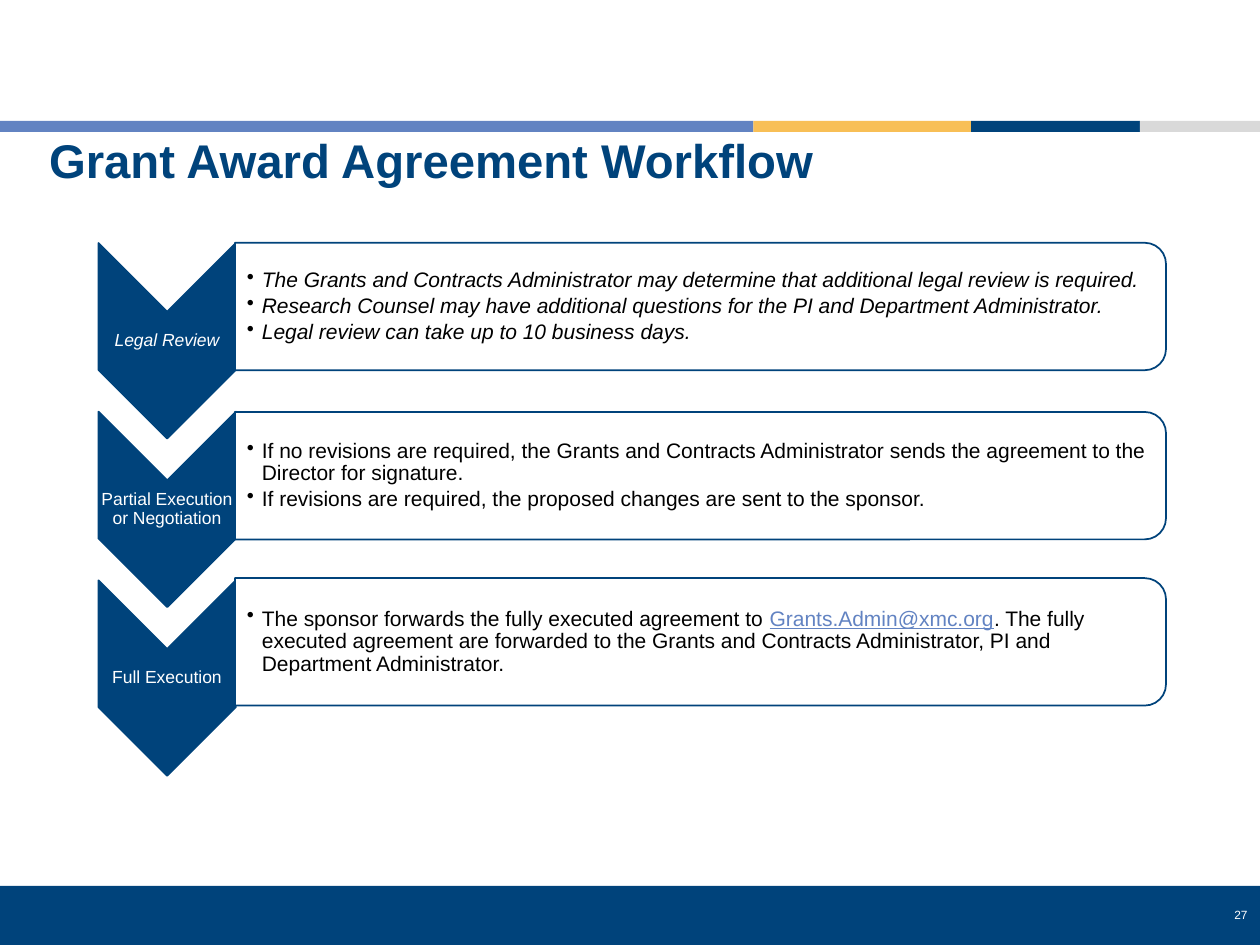
from dataclasses import dataclass

from lxml.etree import SubElement
from pptx import Presentation
from pptx.dml.color import RGBColor
from pptx.enum.shapes import MSO_SHAPE
from pptx.enum.text import MSO_ANCHOR, PP_ALIGN
from pptx.oxml.ns import qn
from pptx.util import Cm, Pt


@dataclass(frozen=True)
class Theme:
    font: str = "Arial"
    navy: str = "00437B"
    blue: str = "6283C2"
    gold: str = "F8BF56"
    grey: str = "D9D9D9"
    white: str = "FFFFFF"
    black: str = "000000"
    title_size: float = 27
    body_size: float = 12
    label_size: float = 10
    number_size: float = 6.8


THEME = Theme()
SLIDE_WIDTH, SLIDE_HEIGHT = 25.4, 19.05
EMAIL = "Grants.Admin@xmc.org"

# Left edge, right edge and colour of each part of the header stripe
STRIPE = [
    (0, 15.19, THEME.blue),
    (15.19, 19.58, THEME.gold),
    (19.58, 22.98, THEME.navy),
    (22.98, SLIDE_WIDTH, THEME.grey),
]

# Label, centre of the details box, italic, details
STEPS = [
    ("Legal Review", 6.18, True, [
        ["The Grants and Contracts Administrator may determine that additional legal review is required."],
        ["Research Counsel may have additional questions for the PI and Department Administrator."],
        ["Legal review can take up to 10 business days."],
    ]),
    ("Partial Execution or Negotiation", 9.59, False, [
        ["If no revisions are required, the Grants and Contracts Administrator sends the agreement to the "
         "Director for signature."],
        ["If revisions are required, the proposed changes are sent to the sponsor."],
    ]),
    ("Full Execution", 12.94, False, [
        ["The sponsor forwards the fully executed agreement to ", EMAIL,
         ". The fully executed agreement are forwarded to the Grants and Contracts Administrator, "
         "PI and Department Administrator."],
    ]),
]
FIRST_CHEVRON, CHEVRON_STEP = 6.87, 3.4


def apply(target, values):
    for name, value in values.items():
        setattr(target, name, value)


def add_bullet(paragraph):
    properties = paragraph._p.get_or_add_pPr()
    properties.set("marL", str(Cm(0.3)))
    properties.set("indent", str(-Cm(0.3)))
    SubElement(properties, qn("a:buChar")).set("char", "•")


class SlideBuilder:
    def __init__(self, slide, theme):
        self.slide = slide
        self.theme = theme

    def shape(self, kind, left, top, width, height, fill, line=None):
        shape = self.slide.shapes.add_shape(kind, Cm(left), Cm(top), Cm(width), Cm(height))
        shape.shadow.inherit = False
        shape.fill.solid()
        shape.fill.fore_color.rgb = RGBColor.from_string(fill)
        if line:
            shape.line.color.rgb = RGBColor.from_string(line)
            shape.line.width = Pt(1)
        else:
            shape.line.fill.background()
        return shape

    def turned_shape(self, kind, center_x, center_y, width, height, fill):
        """Add a shape turned by 90 degrees; width and height are as seen after the turn."""
        shape = self.shape(kind, center_x - height / 2, center_y - width / 2,
                           height, width, fill, self.theme.navy)
        shape.rotation = 90

    def text(self, left, top, width, height, paragraphs, font, color,
             margins=(0.25, 0.13, 0.25, 0.13), anchor=MSO_ANCHOR.TOP,
             paragraph_format=None, bullets=False):
        """Add a text box; each paragraph is a list of run texts."""
        box = self.slide.shapes.add_textbox(Cm(left), Cm(top), Cm(width), Cm(height))
        frame = box.text_frame
        sides = ("margin_left", "margin_top", "margin_right", "margin_bottom")
        apply(frame, {"word_wrap": True, "vertical_anchor": anchor})
        apply(frame, {side: Cm(margin) for side, margin in zip(sides, margins)})
        for index, texts in enumerate(paragraphs):
            paragraph = frame.add_paragraph() if index else frame.paragraphs[0]
            apply(paragraph, paragraph_format or {})
            if bullets:
                add_bullet(paragraph)
            for text in texts:
                run = paragraph.add_run()
                run.text = text
                is_email = text == EMAIL
                apply(run.font, {"name": self.theme.font, "underline": is_email, **font})
                run.font.color.rgb = RGBColor.from_string(self.theme.blue if is_email else color)

    def frame(self):
        """Add the footer band, the header stripe and the slide number."""
        theme = self.theme
        self.shape(MSO_SHAPE.RECTANGLE, 0, 17.86, SLIDE_WIDTH, 1.19, theme.navy)
        for left, right, color in STRIPE:
            self.shape(MSO_SHAPE.RECTANGLE, left, 2.44, right - left, 0.22, color)
        self.text(23.65, 18.16, 1.75, 0.53, [["27"]], {"size": Pt(theme.number_size)},
                  theme.white, paragraph_format={"alignment": PP_ALIGN.RIGHT})

    def title(self, text):
        self.text(0.81, 2.69, 24.31, 1.22, [[text]],
                  {"size": Pt(self.theme.title_size), "bold": True}, self.theme.navy,
                  margins=(0.18, 0.1, 0.18, 0.1), anchor=MSO_ANCHOR.BOTTOM,
                  paragraph_format={"line_spacing": 0.9})

    def step(self, label, chevron_center, details_center, italic, details):
        theme = self.theme
        self.turned_shape(MSO_SHAPE.CHEVRON, 3.37, chevron_center, 2.77, 3.94, theme.navy)
        self.text(1.98, chevron_center - 0.6, 2.77, 1.2, [[label]],
                  {"size": Pt(theme.label_size), "italic": italic}, theme.white,
                  margins=(0.02,) * 4, anchor=MSO_ANCHOR.MIDDLE,
                  paragraph_format={"alignment": PP_ALIGN.CENTER, "line_spacing": 0.9,
                                    "space_after": Pt(3.5)})
        self.turned_shape(MSO_SHAPE.ROUND_2_SAME_RECTANGLE, 14.12, details_center,
                          18.77, 2.57, theme.white)
        self.text(4.75, details_center - 1.16, 18.64, 2.32, details,
                  {"size": Pt(theme.body_size), "italic": italic}, theme.black,
                  margins=(0.23, 0.02, 0.02, 0.02), anchor=MSO_ANCHOR.MIDDLE,
                  paragraph_format={"line_spacing": 0.9, "space_after": Pt(1.8)}, bullets=True)


def main():
    presentation = Presentation()
    presentation.slide_width = Cm(SLIDE_WIDTH)
    presentation.slide_height = Cm(SLIDE_HEIGHT)
    slide = presentation.slides.add_slide(presentation.slide_layouts[6])
    builder = SlideBuilder(slide, THEME)
    builder.frame()
    for index, (label, details_center, italic, details) in enumerate(STEPS):
        chevron_center = FIRST_CHEVRON + index * CHEVRON_STEP
        builder.step(label, chevron_center, details_center, italic, details)
    builder.title("Grant Award Agreement Workflow")
    presentation.save("out.pptx")


if __name__ == "__main__":
    main()
